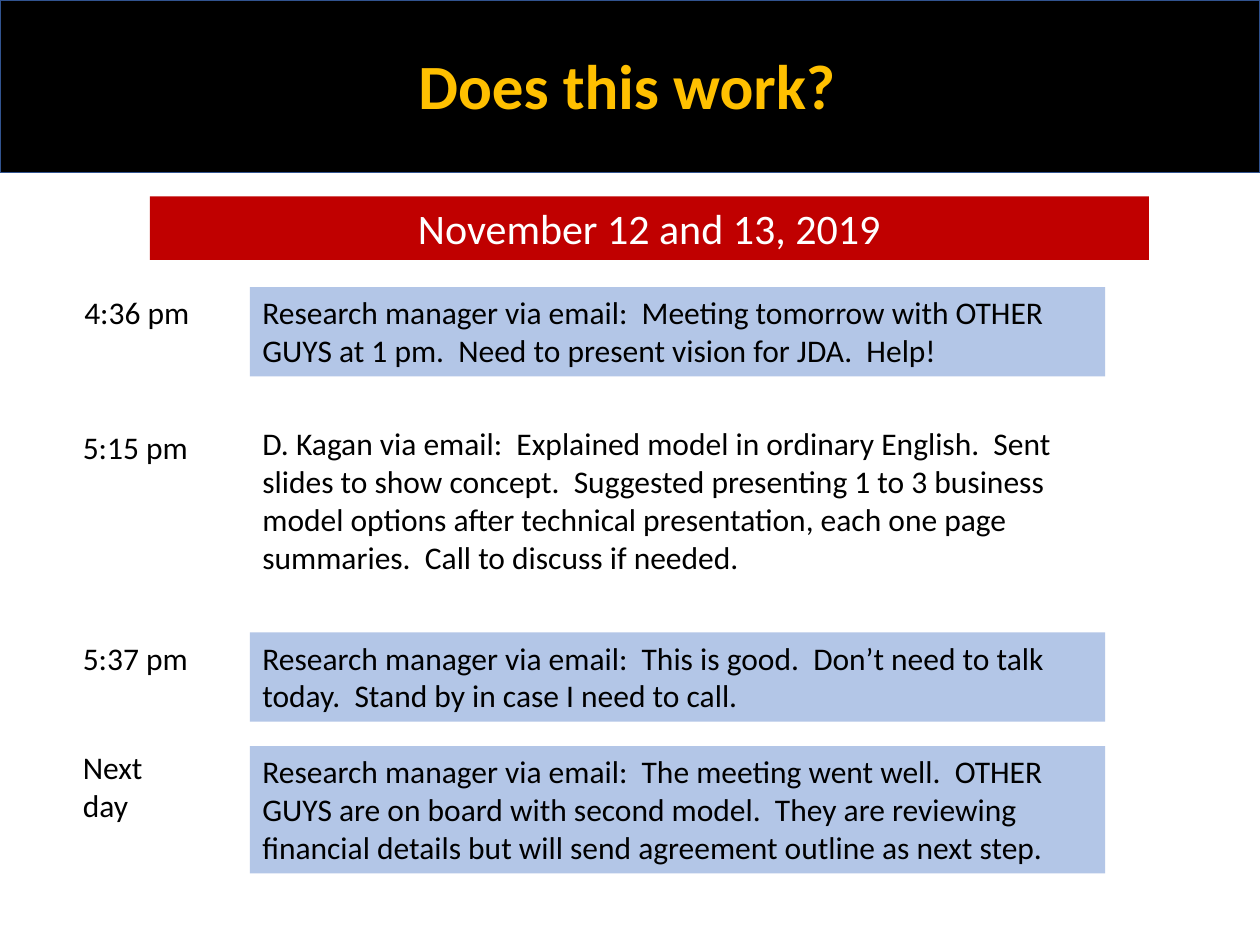
from pptx import Presentation
from pptx import util as u
from pptx.dml.color import RGBColor
from pptx.enum import shapes, text

# Content
TITLE = "Does this work?"
DATES = "November 12 and 13, 2019"
BLUE, BLACK = "B3C6E7", "000000"
# time, its left and top, message, its top, line count, fill
EVENTS = [
    ("4:36 pm", 1.45, 5.79,
     "Research manager via email:  Meeting tomorrow with OTHER GUYS at 1 pm.  "
     "Need to present vision for JDA.  Help!", 5.79, 2, BLUE),
    ("5:15 pm", 1.42, 8.51,
     "D. Kagan via email:  Explained model in ordinary English.  Sent slides to "
     "show concept.  Suggested presenting 1 to 3 business model options after "
     "technical presentation, each one page summaries.  Call to discuss if needed.",
     8.43, 4, None),
    ("5:37 pm", 1.42, 12.75,
     "Research manager via email:  This is good.  Don’t need to talk today.  "
     "Stand by in case I need to call.", 12.75, 2, BLUE),
    ("Next day", 1.42, 14.96,
     "Research manager via email:  The meeting went well.  OTHER GUYS are on board "
     "with second model.  They are reviewing financial details but will send "
     "agreement outline as next step.", 15.04, 3, BLUE),
]

# Layout in centimetres
TIME_WIDTH = 2.72
MESSAGE_LEFT, MESSAGE_WIDTH = 5.04, 17.24
LINE_HEIGHT, PADDING = 0.77, 0.26


def color(value):
    return RGBColor.from_string(value)


def text_height(lines):
    return lines * LINE_HEIGHT + PADDING


def add_box(slide, left, top, width, height, fill=None, line=None):
    place = [u.Cm(value) for value in (left, top, width, height)]
    if fill is None:
        return slide.shapes.add_textbox(*place)
    shape = slide.shapes.add_shape(shapes.MSO_SHAPE.RECTANGLE, *place)
    shape.shadow.inherit = False
    shape.fill.solid()
    shape.fill.fore_color.rgb = color(fill)
    if line:
        shape.line.color.rgb = color(line)
        shape.line.width = u.Pt(1)
    else:
        shape.line.fill.background()
    return shape


def write(shape, words, size=18, ink=BLACK, bold=False, align=text.PP_ALIGN.LEFT):
    frame = shape.text_frame
    frame.word_wrap = True
    frame.auto_size = text.MSO_AUTO_SIZE.SHAPE_TO_FIT_TEXT
    frame.vertical_anchor = text.MSO_ANCHOR.TOP
    paragraph = frame.paragraphs[0]
    paragraph.alignment = align
    run = paragraph.add_run()
    run.text = words
    run.font.name = "Calibri"
    run.font.size = u.Pt(size)
    run.font.bold = bold
    run.font.color.rgb = color(ink)


def main():
    presentation = Presentation()
    presentation.slide_width, presentation.slide_height = u.Cm(25.4), u.Cm(19.05)
    slide = presentation.slides.add_slide(presentation.slide_layouts[6])

    # Title band
    add_box(slide, 0, 0, 25.4, 3.48, BLACK, "31538F")
    title = add_box(slide, 2.11, 0.81, 21.06, 1.8)
    write(title, TITLE, 36, "FFC000", True, text.PP_ALIGN.CENTER)

    # Times and messages
    for time, left, time_top, message, top, lines, fill in EVENTS:
        time_lines = 2 if " day" in time else 1
        write(add_box(slide, left, time_top, TIME_WIDTH, text_height(time_lines)), time)
        write(add_box(slide, MESSAGE_LEFT, top, MESSAGE_WIDTH, text_height(lines), fill),
              message)

    # Date banner
    banner = add_box(slide, 3.02, 3.96, 20.14, 1.28, "C00000")
    write(banner, DATES, 24, "FFFFFF", align=text.PP_ALIGN.CENTER)

    presentation.save("out.pptx")


if __name__ == "__main__":
    main()
